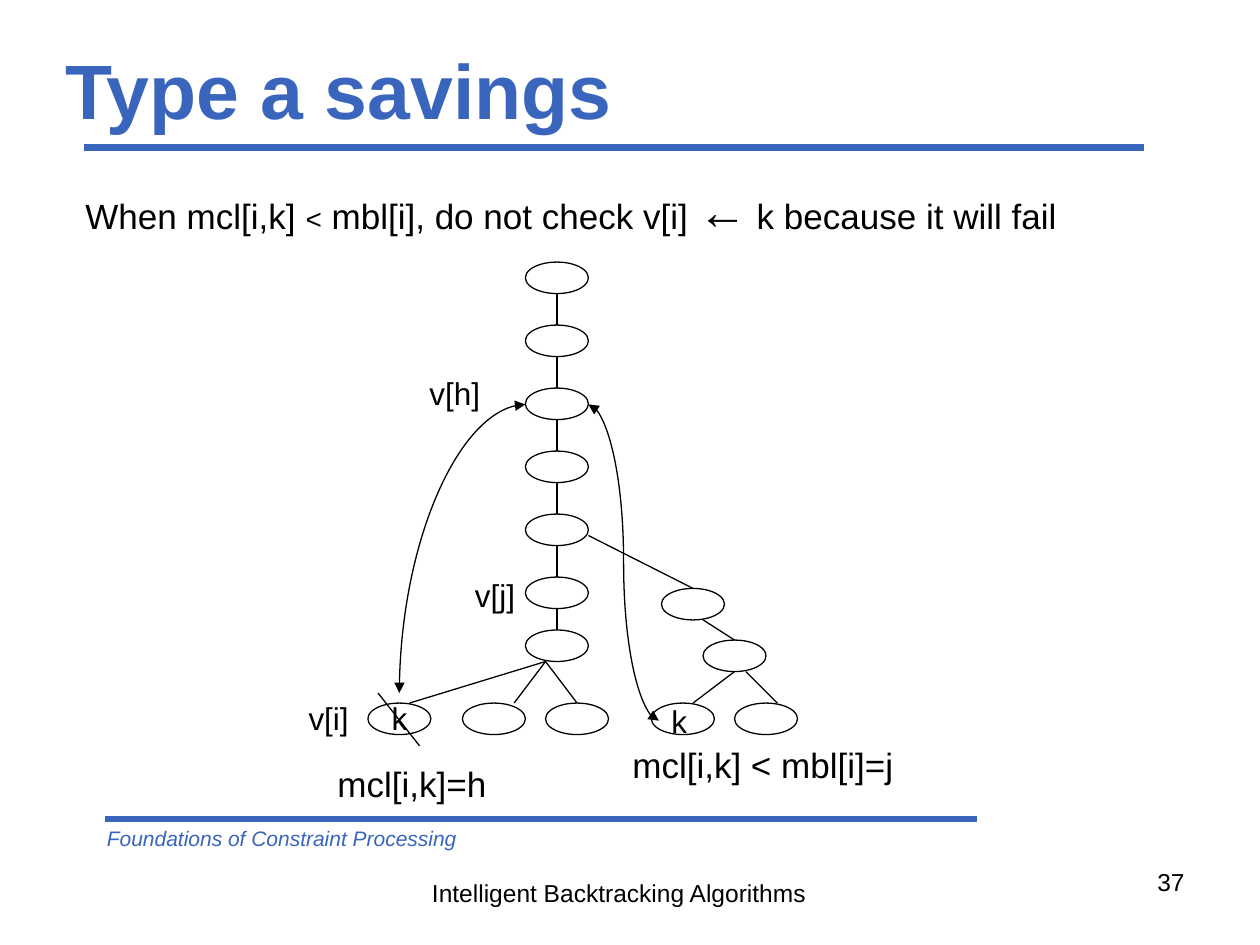
from pptx import Presentation
from pptx.dml.color import RGBColor
from pptx.enum.shapes import MSO_CONNECTOR, MSO_SHAPE
from pptx.enum.text import MSO_ANCHOR, PP_ALIGN
from pptx.oxml.ns import qn
from pptx.util import Inches, Pt
from lxml.etree import SubElement

COLORS = {"accent": "3A65BC", "ink": "000000"}
NODE_WIDTH, NODE_HEIGHT = 0.5, 0.25


class SlideBuilder:
    font_name = "Arial"

    def __init__(self, slide):
        self.slide = slide

    def color(self, key):
        return RGBColor.from_string(COLORS[key])

    def text(self, box, runs, size, color="ink", bold=None, italic=None, wrap=True,
             align=PP_ALIGN.LEFT, anchor=MSO_ANCHOR.TOP, hanging=None):
        frame = self.slide.shapes.add_textbox(*map(Inches, box)).text_frame
        frame.word_wrap = wrap
        frame.vertical_anchor = anchor
        paragraph = frame.paragraphs[0]
        paragraph.alignment = align
        if hanging:
            properties = paragraph._p.get_or_add_pPr()
            properties.set("marL", str(Inches(hanging)))
            properties.set("indent", str(-Inches(hanging)))
        if isinstance(runs, str):
            paragraph.text = runs
            paragraph.font.size = Pt(size)
        else:
            for words, run_size in runs:
                run = paragraph.add_run()
                run.text = words
                run.font.size = Pt(run_size)
        paragraph.font.name = self.font_name
        paragraph.font.bold = bold
        paragraph.font.italic = italic
        paragraph.font.color.rgb = self.color(color)

    def node(self, left, top):
        box = map(Inches, (left, top, NODE_WIDTH, NODE_HEIGHT))
        node = self.slide.shapes.add_shape(MSO_SHAPE.OVAL, *box)
        node.shadow.inherit = False
        node.fill.background()
        node.line.color.rgb = self.color("ink")
        node.line.width = Pt(0.75)

    def line(self, start, end, color="ink", width=0.75, kind=MSO_CONNECTOR.STRAIGHT):
        line = self.slide.shapes.add_connector(kind, *map(Inches, (*start, *end)))
        line.line.color.rgb = self.color(color)
        line.line.width = Pt(width)
        SubElement(line._element.spPr, qn("a:effectLst"))
        return line

    def double_arrow(self, start, end, preset):
        arrow = self.line(start, end, kind=MSO_CONNECTOR.CURVE)
        arrow._element.spPr.find(qn("a:prstGeom")).set("prst", preset)
        outline = arrow.line._get_or_add_ln()
        for tip in ("a:headEnd", "a:tailEnd"):
            SubElement(outline, qn(tip)).set("type", "triangle")


def main():
    presentation = Presentation()
    presentation.slide_width, presentation.slide_height = Inches(10), Inches(7.5)
    builder = SlideBuilder(presentation.slides.add_slide(presentation.slide_layouts[6]))

    builder.line((0.67, 1.17), (9.08, 1.17), "accent", 4)
    builder.line((0.83, 6.5), (7.75, 6.5), "accent", 4)
    builder.text((0.75, 6.5, 5.25, 0.3), "Foundations of Constraint Processing", 12,
                 "accent", italic=True)
    builder.text((3.33, 6.92, 3.19, 0.34), "Intelligent Backtracking Algorithms", 14)
    builder.text((7.17, 6.83, 2.33, 0.52), "37", 14, align=PP_ALIGN.RIGHT)
    builder.text((0.42, 0.33, 9, 0.75), "Type a savings", 44, "accent", bold=True,
                 anchor=MSO_ANCHOR.MIDDLE)

    trunk_left, leaf_top = 4.17, 5.58
    trunk_center = trunk_left + NODE_WIDTH / 2
    trunk_tops = [2.08 + 0.5 * level for level in range(6)] + [5]
    for top in trunk_tops:
        builder.node(trunk_left, top)
    for upper, lower in zip(trunk_tops, trunk_tops[1:]):
        builder.line((trunk_center, upper + NODE_HEIGHT), (trunk_center, lower))

    for left in (2.92, 3.67, 4.33, 5.17, 5.83):
        builder.node(left, leaf_top)
    for left, top in ((5.25, 4.67), (5.58, 5.08)):
        builder.node(left, top)

    for leaf_x in (3.25, 4.08, 4.58):
        builder.line((4.33, 5.25), (leaf_x, leaf_top))
    for start, end in (
        ((4.67, 4.25), (5.5, 4.67)),
        ((5.58, 4.92), (5.83, 5.08)),
        ((5.83, 5.33), (5.5, leaf_top)),
        ((5.92, 5.33), (6.17, leaf_top)),
    ):
        builder.line(start, end)

    for label, left, top, width in (
        ("v[h]", 3.31, 2.92, 0.6),
        ("v[i]", 2.35, 5.5, 0.52),
        ("k", 5.23, 5.52, 0.33),
        ("k", 3.01, 5.5, 0.33),
        ("v[j]", 3.67, 4.52, 0.52),
    ):
        builder.text((left, top, width, 0.4), label, 18, wrap=False)

    builder.double_arrow((5.23, 5.72), (4.67, 3.21), "curvedConnector3")
    builder.double_arrow((4.17, 3.21), (3.17, 5.5), "curvedConnector2")
    builder.line((3, 5.5), (3.33, 5.92))

    builder.text((2.58, 6, 1.92, 0.43), "mcl[i,k]=h", 20)
    builder.text((4.92, 5.85, 3.25, 0.43), "mcl[i,k] < mbl[i]=j", 20)
    rule = (("When mcl[i,k] ", 20), ("<", 16), (" mbl[i], do not check v[i] ", 20),
            ("←", 28), (" k because it will fail", 20))
    builder.text((0.58, 1.38, 8.67, 0.45), rule, 20, hanging=0.38)

    presentation.save("out.pptx")


if __name__ == "__main__":
    main()
